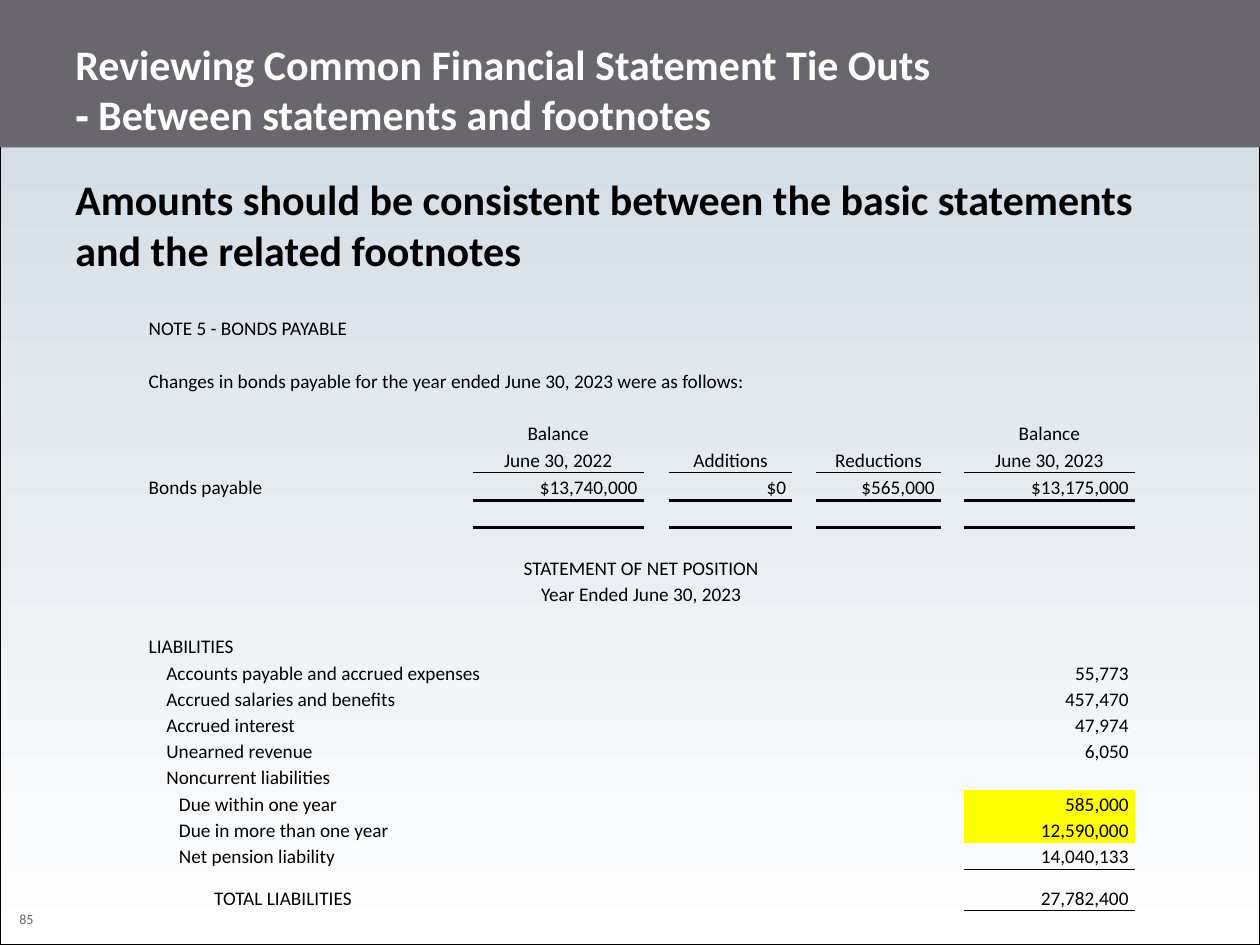
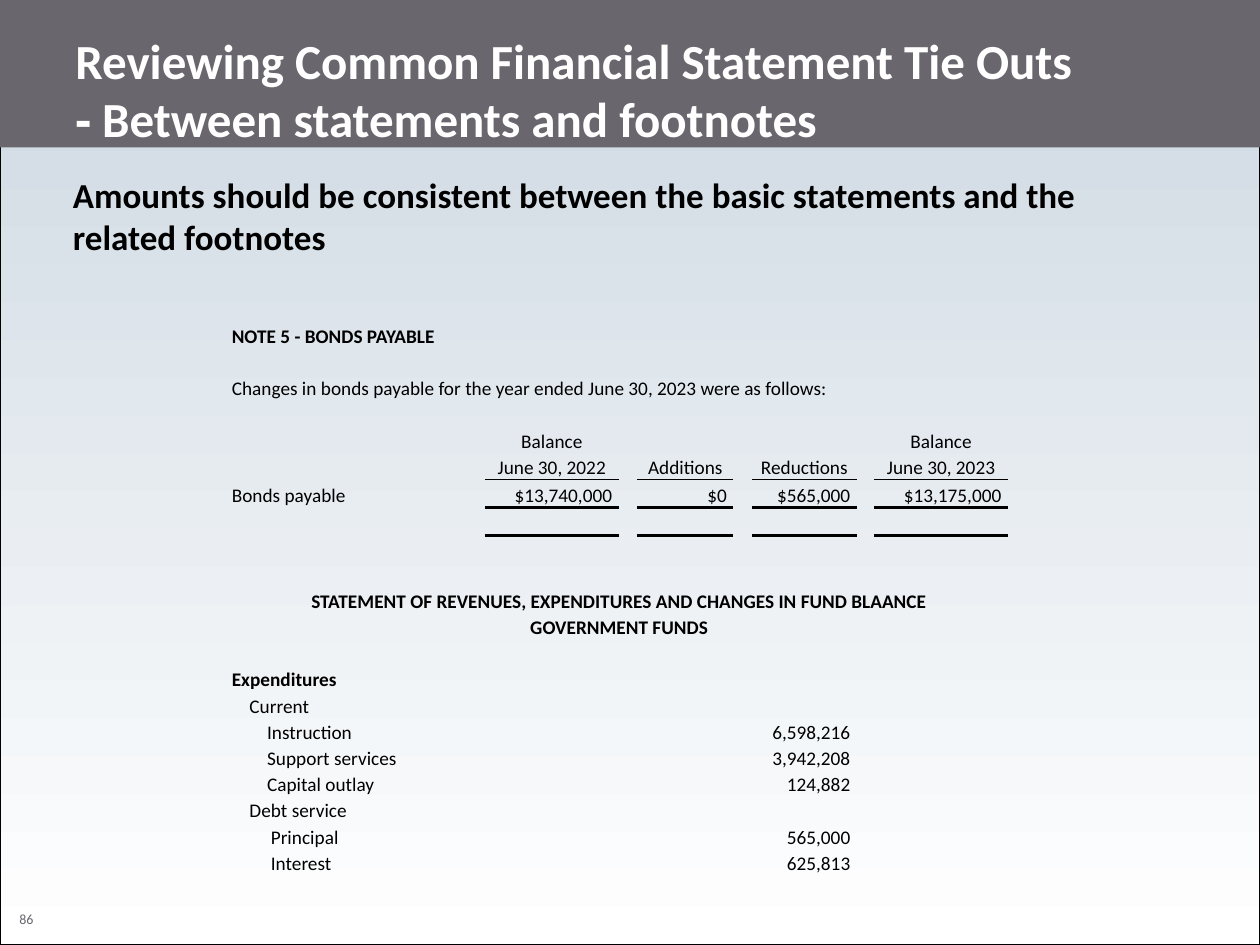
from dataclasses import dataclass

import pptx
import pptx.dml.color
import pptx.enum.shapes
import pptx.enum.text
import pptx.oxml.ns
import pptx.util
from lxml import etree

Inches = pptx.util.Inches
Pt = pptx.util.Pt
qn = pptx.oxml.ns.qn
Align = pptx.enum.text.PP_ALIGN
Anchor = pptx.enum.text.MSO_ANCHOR


@dataclass(frozen=True)
class Theme:
    font: str = "Calibri"
    ink: str = "000000"
    paper: str = "FFFFFF"
    band: str = "69676D"
    sky: str = "CCD7E1"
    highlight: str = "FFFF00"
    table_size: int = 11
    number_size: int = 8
    thin: float = 0.5
    thick: float = 2
    frame: float = 0.75


THEME = Theme()
PLAIN_TABLE_STYLE = "{2D5ABB26-0587-4C30-8999-92F81FD0307C}"
TITLE = ["Reviewing Common Financial Statement Tie Outs",
         "‐ Between statements and footnotes"]
MESSAGE = ("Amounts should be consistent between the basic statements "
           "and the related footnotes")

# Bonds note: table column -> heading lines and amount
NOTE_COLUMNS = {
    2: ("Balance", "June 30, 2022", "$13,740,000"),
    4: ("", "Additions", "$0"),
    6: ("", "Reductions", "$565,000"),
    8: ("Balance", "June 30, 2023", "$13,175,000"),
}
HEADING_ROW, DATE_ROW, BONDS_ROW = 4, 5, 6
ROW_COUNT = 22
BONDS_ROW_HEIGHT = 0.22
CELL_MARGIN = 0.01
AMOUNT_MARGIN = 0.05


@dataclass
class Line:
    """One row of a statement; span counts the columns the label covers."""
    label: str
    amount: str = ""
    span: int = 1
    indent: float = 0
    bold: bool = False
    marked: bool = False
    ruled: bool = False


@dataclass
class Statement:
    headings: list
    lines: list
    first_row: int
    amount_column: int
    bold: bool
    place: tuple
    columns: list
    last_row: float = 0


NET_POSITION = Statement(
    headings=["STATEMENT OF NET POSITION", "Year Ended June 30, 2023"],
    lines=[
        Line("LIABILITIES"),
        Line("Accounts payable and accrued expenses", "55,773", 4, 0.14),
        Line("Accrued salaries and benefits", "457,470", 3, 0.14),
        Line("Accrued interest", "47,974", 2, 0.14),
        Line("Unearned revenue", "6,050", 2, 0.14),
        Line("Noncurrent liabilities", "", 2, 0.14),
        Line("Due within one year", "585,000", 2, 0.24, marked=True),
        Line("Due in more than one year", "12,590,000", 3, 0.24, marked=True),
        Line("Net pension liability", "14,040,133", 2, 0.24, ruled=True),
        Line("TOTAL LIABILITIES", "27,782,400", 2, 0.52, ruled=True),
    ],
    first_row=9, amount_column=8, bold=False, place=(1.17, 2.5, 7.83, 4.73),
    columns=[1.6, 0.98, 1.36, 0.19, 0.98, 0.19, 0.99, 0.18, 1.36],
    last_row=0.33,
)

FUND_CHANGES = Statement(
    headings=["STATEMENT OF REVENUES, EXPENDITURES AND CHANGES IN FUND BLAANCE",
              "GOVERNMENT FUNDS"],
    lines=[
        Line("Expenditures", bold=True),
        Line("Current", indent=0.14),
        Line("Instruction", "6,598,216", 1, 0.28),
        Line("Support services", "3,942,208", 2, 0.28),
        Line("Capital outlay", "124,882", 2, 0.28),
        Line("Debt service", indent=0.14),
        Line("Principal", "565,000", 1, 0.31),
        Line("Interest", "625,813", 1, 0.31),
    ],
    first_row=10, amount_column=6, bold=True, place=(1.83, 2.56, 6.17, 4.6),
    columns=[1.25, 0.77, 1.06, 0.15, 0.76, 0.15, 0.83, 0.14, 1.06],
)


def rgb(code):
    return pptx.dml.color.RGBColor.from_string(code)


def write(frame, text, *, size, color=THEME.ink, bold=False, align=Align.LEFT):
    """Fill the first paragraph; a list of texts is joined by line breaks."""
    para = frame.paragraphs[0]
    para.alignment = align
    for index, part in enumerate([text] if isinstance(text, str) else text):
        if index:
            para.add_line_break()
        span = para.add_run()
        span.text = part
        span.font.name = THEME.font
        span.font.size = Pt(size)
        span.font.bold = bold
        span.font.color.rgb = rgb(color)


def add_text(page, place, text, *, anchor=Anchor.TOP, **text_format):
    box = page.shapes.add_textbox(*map(Inches, place))
    box.text_frame.word_wrap = True
    box.text_frame.vertical_anchor = anchor
    write(box.text_frame, text, **text_format)


def add_rectangle(page, place, fill=None, line=None):
    shape = page.shapes.add_shape(
        pptx.enum.shapes.MSO_SHAPE.RECTANGLE, *map(Inches, place))
    shape.shadow.inherit = False
    if fill:
        shape.fill.solid()
        shape.fill.fore_color.rgb = rgb(fill)
    else:
        shape.fill.background()
    if line:
        shape.line.color.rgb = rgb(line)
        shape.line.width = Pt(THEME.frame)
    else:
        shape.line.fill.background()


def add_page(deck, number, title_size, message_size, message_left):
    """Add a slide with the gradient, frame, number, title band and message."""
    page = deck.slides.add_slide(deck.slide_layouts[6])
    fill = page.background.fill
    fill.gradient()
    fill.gradient_angle = 270
    for stop, color in zip(fill.gradient_stops, (THEME.sky, THEME.paper)):
        stop.color.rgb = rgb(color)
    add_rectangle(page, (0, 0, 10, 7.5), line=THEME.ink)
    add_text(page, (0, 7.18, 0.42, 0.24), str(number), size=THEME.number_size,
             color=THEME.band, align=Align.CENTER)
    add_rectangle(page, (0, 0, 10, 1.17), fill=THEME.band)
    add_text(page, (0.5, 0.33, 9, 0.75), TITLE, size=title_size,
             color=THEME.paper, bold=True, anchor=Anchor.MIDDLE)
    add_text(page, (message_left, 1.33, 9, 5.33), MESSAGE,
             size=message_size, bold=True)
    return page


def row_heights(statement):
    """Share out evenly what the rows of fixed height leave."""
    fixed = {BONDS_ROW: BONDS_ROW_HEIGHT, BONDS_ROW + 1: BONDS_ROW_HEIGHT}
    if statement.last_row:
        fixed[ROW_COUNT - 1] = statement.last_row
    even = (statement.place[3] - sum(fixed.values())) / (ROW_COUNT - len(fixed))
    return [fixed.get(row, even) for row in range(ROW_COUNT)]


def add_plain_table(page, statement):
    table = page.shapes.add_table(ROW_COUNT, len(statement.columns),
                                  *map(Inches, statement.place)).table
    table.first_row = table.horz_banding = False
    table._tbl.tblPr.find(qn("a:tableStyleId")).text = PLAIN_TABLE_STYLE
    for column, width in zip(table.columns, statement.columns):
        column.width = Inches(width)
    for row, height in zip(table.rows, row_heights(statement)):
        row.height = Inches(height)
    for cell in table.iter_cells():
        cell.fill.background()
        cell.vertical_anchor = Anchor.BOTTOM
        cell.margin_left = cell.margin_right = Inches(CELL_MARGIN)
        cell.margin_top, cell.margin_bottom = Inches(CELL_MARGIN), 0
        etree.SubElement(cell.text_frame.paragraphs[0]._p,
                         qn("a:endParaRPr"), sz=str(THEME.table_size * 100))
    return table


def put(table, row, column, text, *, span=1, indent=0, **text_format):
    cell = table.cell(row, column)
    if span > 1:
        cell.merge(table.cell(row, column + span - 1))
    cell.margin_left = Inches(CELL_MARGIN + indent)
    write(cell.text_frame, text, size=THEME.table_size, **text_format)


def put_amount(table, row, column, text):
    put(table, row, column, text, align=Align.RIGHT)
    table.cell(row, column).margin_right = Inches(AMOUNT_MARGIN)


def add_border(cell, side, width):
    props = cell._tc.get_or_add_tcPr()
    earlier = sum(child.tag.startswith(qn("a:ln")) for child in props)
    line = etree.Element(qn(f"a:ln{side}"), w=str(Pt(width)))
    solid = etree.SubElement(line, qn("a:solidFill"))
    etree.SubElement(solid, qn("a:srgbClr"), val=THEME.ink)
    props.insert(earlier, line)


def rule_below(table, row, column, width):
    """Draw the line that a cell shares with the cell below; go top down."""
    add_border(table.cell(row, column), "B", width)
    if row + 1 < ROW_COUNT:
        add_border(table.cell(row + 1, column), "T", width)


def fill_bonds_note(table, bold):
    put(table, 0, 0, "NOTE 5 - BONDS PAYABLE", span=2, bold=bold)
    put(table, 2, 0, "Changes in bonds payable for the year ended "
        "June 30, 2023 were as follows:", span=len(table.columns))
    put(table, BONDS_ROW, 0, "Bonds payable")
    for column, (heading, label, amount) in NOTE_COLUMNS.items():
        if heading:
            put(table, HEADING_ROW, column, heading, align=Align.CENTER)
        put(table, DATE_ROW, column, label, align=Align.CENTER)
        put_amount(table, BONDS_ROW, column, amount)
        rule_below(table, DATE_ROW, column, THEME.thin)
        rule_below(table, BONDS_ROW, column, THEME.thick)


def fill_statement(table, statement):
    for row, heading in enumerate(statement.headings, statement.first_row):
        put(table, row, 0, heading, span=len(table.columns),
            bold=statement.bold, align=Align.CENTER)
    lines_row = statement.first_row + len(statement.headings) + 1
    column = statement.amount_column
    for row, line in enumerate(statement.lines, lines_row):
        put(table, row, 0, line.label, span=line.span, indent=line.indent,
            bold=line.bold)
        if line.amount:
            put_amount(table, row, column, line.amount)
        if line.marked:
            fill = table.cell(row, column).fill
            fill.solid()
            fill.fore_color.rgb = rgb(THEME.highlight)
        if line.ruled:
            rule_below(table, row, column, THEME.thin)


def add_tie_out(page, statement):
    table = add_plain_table(page, statement)
    fill_bonds_note(table, statement.bold)
    fill_statement(table, statement)


def main():
    deck = pptx.Presentation()
    deck.slide_width, deck.slide_height = Inches(10), Inches(7.5)
    add_tie_out(add_page(deck, 85, 24, 24, 0.5), NET_POSITION)
    add_tie_out(add_page(deck, 86, 28, 20, 0.48), FUND_CHANGES)
    deck.save("out.pptx")


if __name__ == "__main__":
    main()
